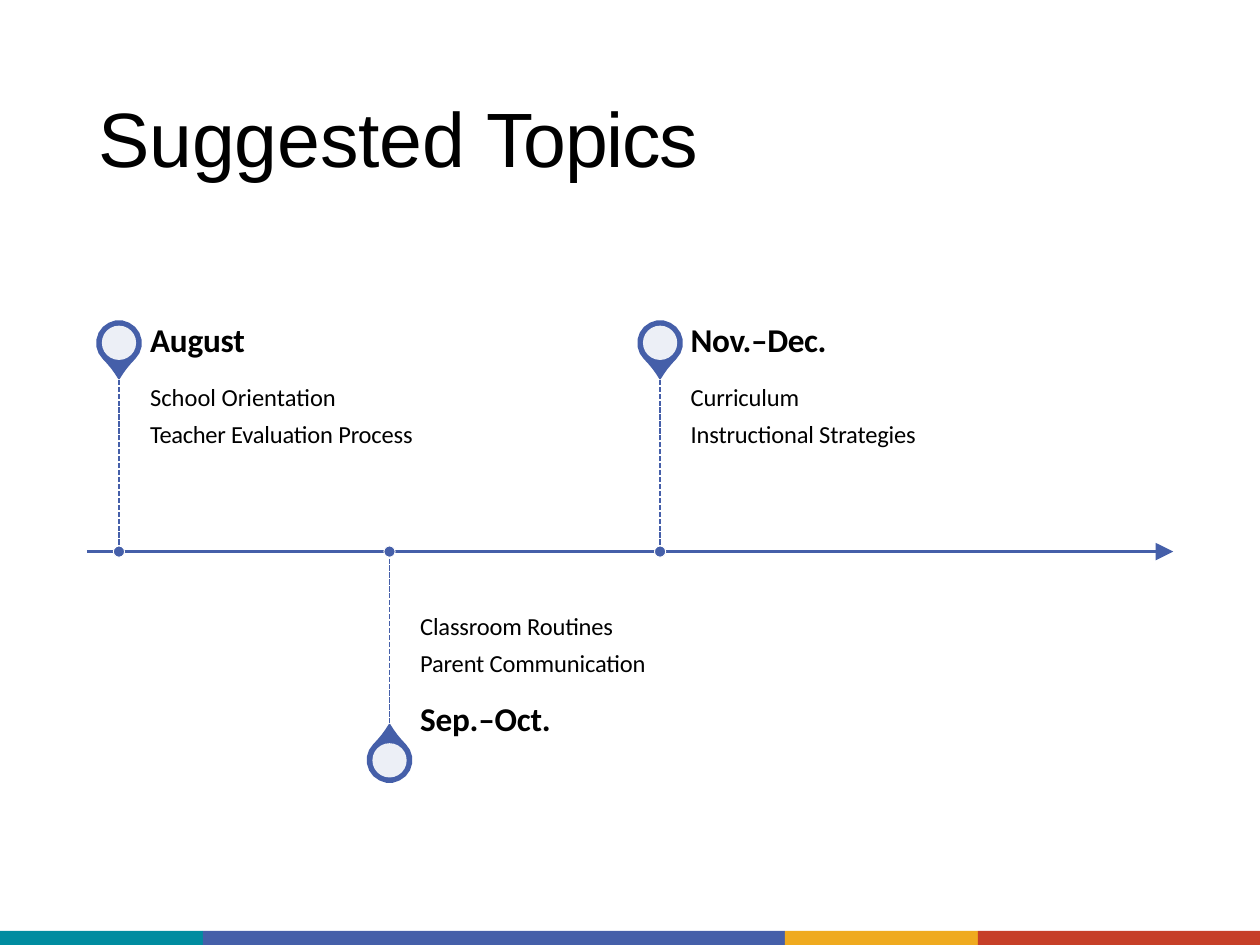
"""Build the Suggested Topics timeline slide."""
from itertools import pairwise

from lxml.etree import SubElement
from pptx import Presentation
from pptx.dml.color import RGBColor
from pptx.enum.dml import MSO_LINE
from pptx.enum.shapes import MSO_CONNECTOR as CONNECTOR, MSO_SHAPE as SHAPE
from pptx.enum.text import MSO_ANCHOR as ANCHOR
from pptx.oxml.ns import qn
from pptx.util import Pt

BLUE, WHITE, BLACK = "455FA9", "FFFFFF", "000000"


def paint(target, color):
    target.solid()
    target.fore_color.rgb = RGBColor.from_string(color)


def finish(shape, fill, line=None, width=1):
    shape.shadow.inherit = False
    paint(shape.fill, fill)
    if line:
        paint(shape.line.fill, line)
        shape.line.width = Pt(width)
    else:
        shape.line.fill.background()


prs = Presentation()
prs.slide_width, prs.slide_height = Pt(720), Pt(540)
slide = prs.slides.add_slide(prs.slide_layouts[6])
shapes = slide.shapes

band_edges = [0, 116, 448.5, 558.8, 720]
band_colors = ["008CA0", BLUE, "EFAA1F", "C63F28"]
for (left, right), color in zip(pairwise(band_edges), band_colors):
    band = shapes.add_shape(SHAPE.RECTANGLE, Pt(left), Pt(532), Pt(right - left), Pt(8))
    finish(band, color)

axis_y = 315.2
axis = shapes.add_connector(CONNECTOR.STRAIGHT, Pt(49.7), Pt(axis_y), Pt(661.7), Pt(axis_y))
paint(axis.line.fill, BLUE)
axis.line.width = Pt(1.5)
lines = [axis]

arrow = shapes.build_freeform(Pt(660.4), Pt(axis_y - 5))
arrow.add_line_segments([(Pt(660.4), Pt(axis_y + 5)), (Pt(670.4), Pt(axis_y))])
finish(arrow.convert_to_shape(), BLUE)

# Distances from the pin's centre line and from its tip
half_pin = [(1.9, 3), (4, 5.9), (6.4, 8.8), (9, 11.6), (11.2, 14.6), (12.4, 18.2),
            (12.4, 22.2), (11.2, 25.9), (8.9, 29.1), (5.6, 31.4), (1.9, 32.7)]
pin_outline = half_pin + [(-across, away) for across, away in reversed(half_pin)]
first_stop, stop_gap = 68, 154.6
tip_reach, dash_reach, hole_reach = 98.9, 101.2, 119.3
hole_radius, dot_radius = 9.8, 3.2

for number, side in enumerate([-1, 1, -1]):
    stop_x = first_stop + number * stop_gap
    tip_y = axis_y + side * tip_reach
    pin = shapes.build_freeform(Pt(stop_x), Pt(tip_y))
    pin.add_line_segments([(Pt(stop_x + across), Pt(tip_y + side * away))
                           for across, away in pin_outline])
    finish(pin.convert_to_shape(), BLUE, BLUE)

    hole_y = axis_y + side * hole_reach
    hole = shapes.add_shape(SHAPE.OVAL, Pt(stop_x - hole_radius), Pt(hole_y - hole_radius),
                            Pt(2 * hole_radius), Pt(2 * hole_radius))
    finish(hole, WHITE)
    hole_color = hole._element.spPr.find(qn("a:solidFill"))[0]
    SubElement(hole_color, qn("a:alpha"), val="90000")

    dash = shapes.add_connector(CONNECTOR.STRAIGHT, Pt(stop_x), Pt(axis_y),
                                Pt(stop_x), Pt(axis_y + side * dash_reach))
    paint(dash.line.fill, BLUE)
    dash.line.width = Pt(1)
    dash.line.dash_style = MSO_LINE.SQUARE_DOT
    lines.append(dash)

    dot = shapes.add_shape(SHAPE.OVAL, Pt(stop_x - dot_radius), Pt(axis_y - dot_radius),
                           Pt(2 * dot_radius), Pt(2 * dot_radius))
    finish(dot, BLUE, WHITE, 0.5)

for line in lines:
    SubElement(line._element.spPr, qn("a:effectLst"))

title_font = {"name": "Arial", "size": Pt(44), "bold": False}
month_font = {"name": "Calibri", "size": Pt(19), "bold": True}
topic_font = {"name": "Calibri", "size": Pt(14), "bold": False}
frame_format = {"margin_left": Pt(0.8), "margin_right": 0, "margin_top": 0,
                "margin_bottom": 0, "word_wrap": True}

# Box, anchor, then paragraphs as (space before, font, [(text, letter spacing)])
texts = [
    ((55.4, 50.4, 349.2, 54), ANCHOR.BOTTOM,
     [(0, title_font, [("Suggested ", -10), ("Topics", -80)])]),
    ((85, 182.2, 155, 73.5), ANCHOR.TOP,
     [(0, month_font, [("August", -10)]),
      (13.3, topic_font, [("School Orientation", 0)]),
      (4.5, topic_font, [("Teacher ", -20), ("Evaluation Process", -10)])]),
    ((239.3, 349, 133.2, 75), ANCHOR.TOP,
     [(0, topic_font, [("Classroom Routines", -10)]),
      (4.5, topic_font, [("Parent Communication", -10)]),
      (12.1, month_font, [("Sep.–Oct.", -10)])]),
    ((393.9, 182.2, 133.2, 76.3), ANCHOR.TOP,
     [(0, month_font, [("Nov.–Dec.", -20)]),
      (13.3, topic_font, [("Curriculum", -10)]),
      (4.5, topic_font, [("Instructional Strategies", -10)])]),
]
for box, anchor, paragraphs in texts:
    frame = shapes.add_textbox(*map(Pt, box)).text_frame
    frame.vertical_anchor = anchor
    for attribute, value in frame_format.items():
        setattr(frame, attribute, value)
    for index, (space, font, pieces) in enumerate(paragraphs):
        paragraph = frame.add_paragraph() if index else frame.paragraphs[0]
        if space:
            paragraph.space_before = Pt(space)
        for words, spacing in pieces:
            run = paragraph.add_run()
            run.text = words
            for attribute, value in font.items():
                setattr(run.font, attribute, value)
            paint(run.font.fill, BLACK)
            run._r.get_or_add_rPr().set("spc", str(spacing))

prs.save("out.pptx")
